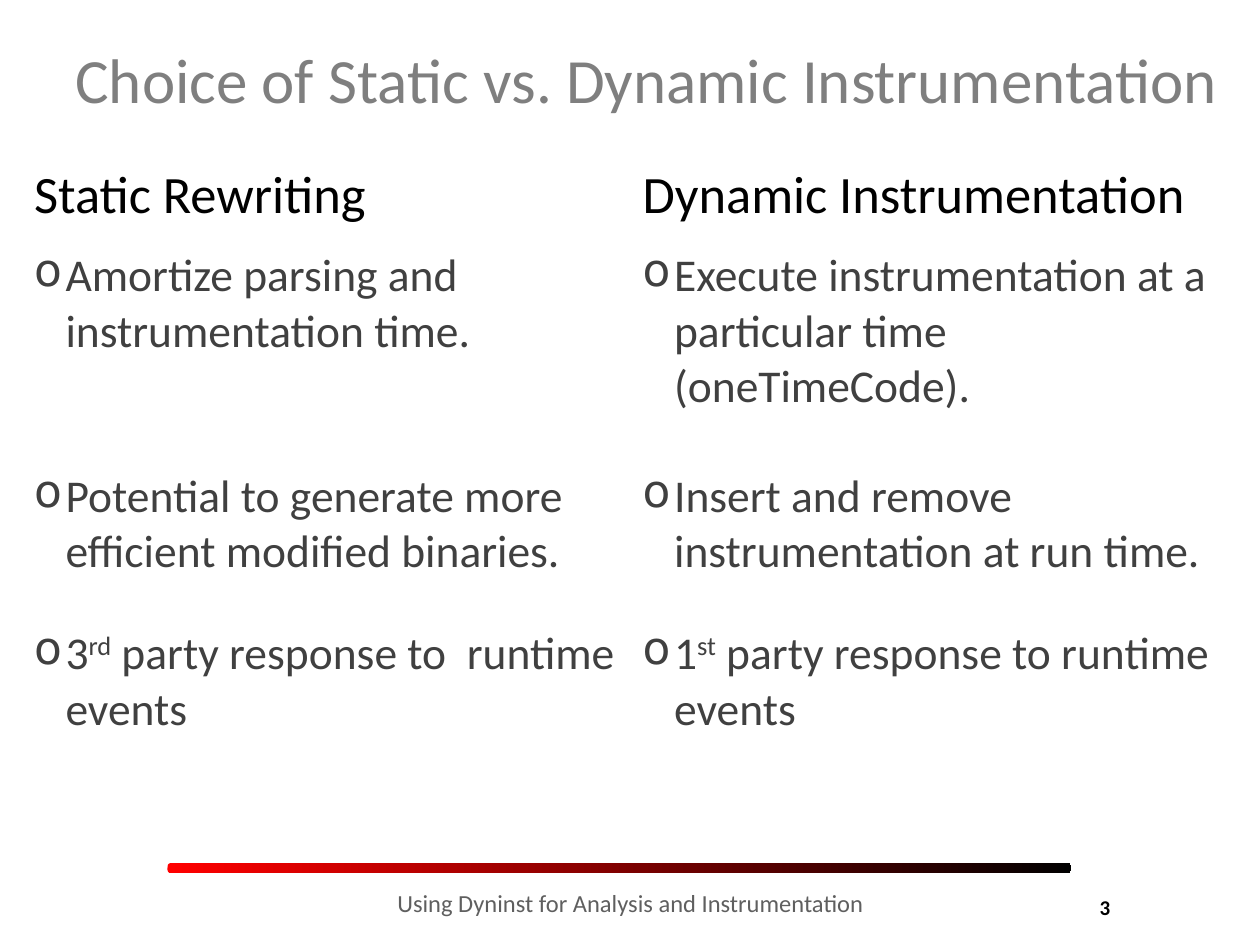
"""Build a slide comparing static rewriting with dynamic instrumentation."""
import pptx
import pptx.dml.color
import pptx.enum.shapes
import pptx.enum.text
import pptx.oxml.ns
import pptx.util
from dataclasses import dataclass
from lxml import etree

Inches = pptx.util.Inches
RGBColor = pptx.dml.color.RGBColor
Align = pptx.enum.text.PP_ALIGN
Anchor = pptx.enum.text.MSO_ANCHOR


@dataclass(frozen=True)
class Theme:
    font: str = "Calibri"
    black: str = "000000"
    body: str = "404040"
    title: str = "7F7F7F"
    footer: str = "5F5F5F"
    bar_start: str = "FF0000"
    title_size: int = 36
    heading_size: int = 30
    body_size: int = 26
    footer_size: int = 14
    number_size: int = 12


theme = Theme()


def format_runs(paragraph, size, color, bold=False):
    for run in paragraph.runs:
        run.font.name = theme.font
        run.font.size = pptx.util.Pt(size)
        run.font.bold = bold
        run.font.color.rgb = RGBColor.from_string(color)


presentation = pptx.Presentation()
presentation.slide_width = Inches(10)
presentation.slide_height = Inches(7.5)
slide = presentation.slides.add_slide(presentation.slide_layouts[6])

bar = slide.shapes.add_shape(
    pptx.enum.shapes.MSO_SHAPE.ROUNDED_RECTANGLE,
    Inches(1.33), Inches(6.85), Inches(7.17), Inches(0.08),
)
bar.adjustments[0] = 0.33
bar.shadow.inherit = False
bar.line.fill.background()
bar.fill.gradient()
bar.fill.gradient_angle = 0
for stop, color, position in zip(bar.fill.gradient_stops, (theme.bar_start, theme.black), (0, 1)):
    stop.color.rgb = RGBColor.from_string(color)
    stop.position = position

headings = ["Static Rewriting", "Dynamic Instrumentation"]
points = [
    [["Amortize parsing and instrumentation time."],
     ["Execute instrumentation at a particular time (oneTimeCode)."]],
    [["Potential to generate more efficient modified binaries."],
     ["Insert and remove instrumentation at run time."]],
    [["3", "rd", " party response to  runtime events"],
     ["1", "st", " party response to runtime events"]],
]
row_heights = [0.67, 1.75, 1.25, 1.1]
table = slide.shapes.add_table(
    len(row_heights), len(headings),
    Inches(0.17), Inches(1.25), Inches(9.67), Inches(sum(row_heights)),
).table
table.first_row = False
table.horz_banding = False
for column in table.columns:
    column.width = Inches(4.83)
for row, height in zip(table.rows, row_heights):
    row.height = Inches(height)
for cell in table.iter_cells():
    cell.fill.background()

for column_index, heading in enumerate(headings):
    paragraph = table.cell(0, column_index).text_frame.paragraphs[0]
    paragraph.text = heading
    format_runs(paragraph, theme.heading_size, theme.black)

for row_index, row_points in enumerate(points, start=1):
    for column_index, parts in enumerate(row_points):
        paragraph = table.cell(row_index, column_index).text_frame.paragraphs[0]
        properties = paragraph._p.get_or_add_pPr()
        properties.set("marL", str(Inches(0.25)))
        properties.set("indent", str(-Inches(0.25)))
        bullet = etree.SubElement(properties, pptx.oxml.ns.qn("a:buChar"))
        bullet.set("char", "o")
        for part_index, part in enumerate(parts):
            run = paragraph.add_run()
            run.text = part
            if part_index == 1:
                run.font._element.set("baseline", "30000")
        format_runs(paragraph, theme.body_size, theme.body)

labels = [
    ("3", (7.58, 7, 1.33, 0.4), Align.RIGHT, Anchor.MIDDLE,
     theme.number_size, theme.black, True),
    ("Using Dyninst for Analysis and Instrumentation", (2.42, 7, 5.17, 0.4),
     Align.CENTER, Anchor.TOP, theme.footer_size, theme.footer, False),
    ("Choice of Static vs. Dynamic Instrumentation", (0.5, 0, 9.5, 1.25),
     Align.LEFT, Anchor.MIDDLE, theme.title_size, theme.title, False),
]
for text, box, alignment, anchor, size, color, bold in labels:
    text_frame = slide.shapes.add_textbox(*map(Inches, box)).text_frame
    text_frame.word_wrap = True
    text_frame.vertical_anchor = anchor
    text_frame.text = text
    paragraph = text_frame.paragraphs[0]
    paragraph.alignment = alignment
    format_runs(paragraph, size, color, bold)

presentation.save("out.pptx")
